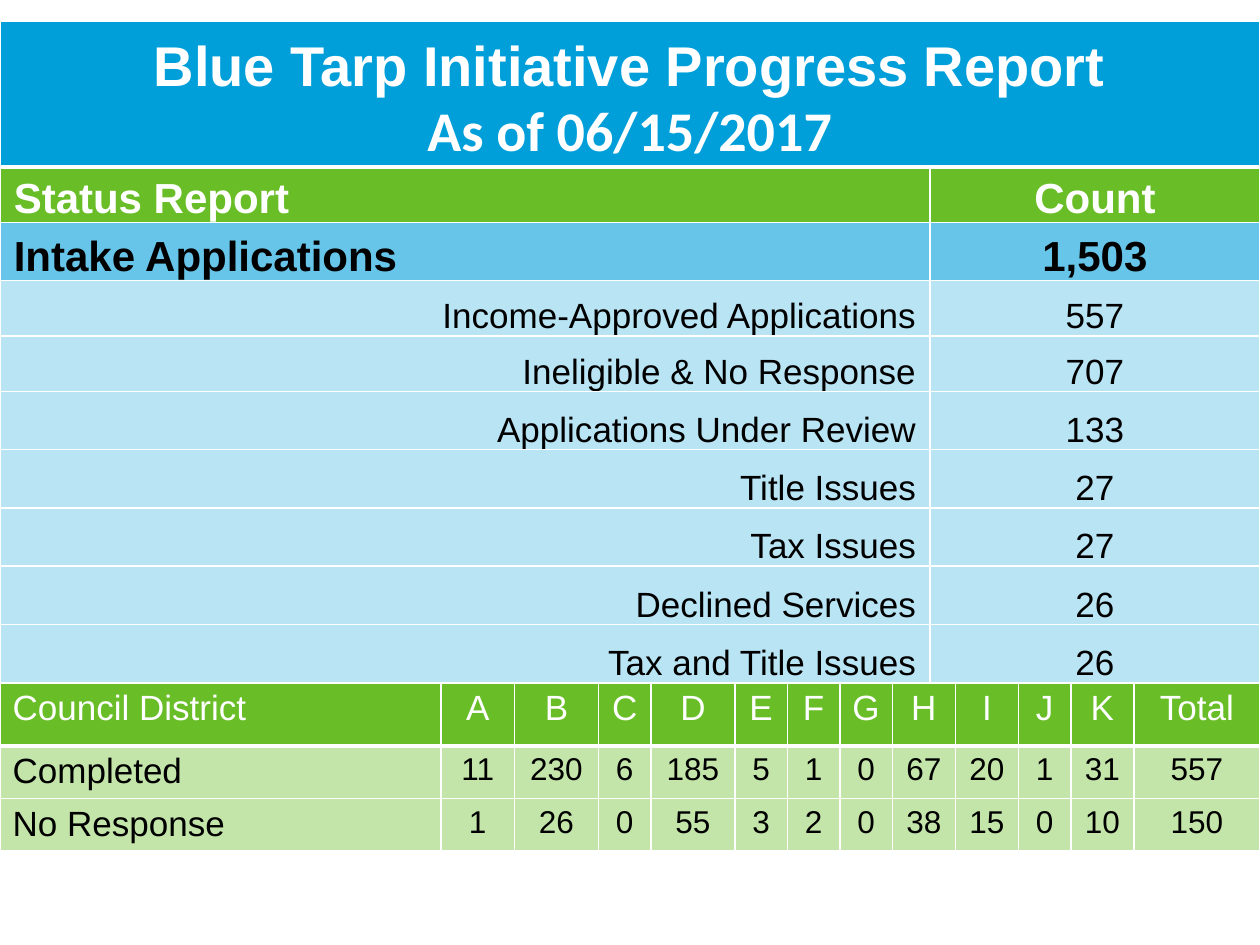
from lxml.etree import SubElement
from pptx import Presentation
from pptx.dml.color import RGBColor as RGB
from pptx.enum.text import MSO_ANCHOR as ANCHOR, PP_ALIGN as ALIGN
from pptx.oxml.ns import qn
from pptx.util import Pt

COLORS = {"blue": "009FDA", "green": "69BE28", "white": "FFFFFF", "black": "000000"}
TITLE = [("Blue Tarp Initiative Progress Report", "Arial"), ("As of 06/15/2017", "Calibri")]
STATUS = [
    ("Status Report", "Count"),
    ("Intake Applications", "1,503"),
    ("Income-Approved Applications", "557"),
    ("Ineligible & No Response", "707"),
    ("Applications Under Review", "133"),
    ("Title Issues", "27"),
    ("Tax Issues", "27"),
    ("Declined Services", "26"),
    ("Tax and Title Issues", "26"),
]
DISTRICTS = [
    ["Council District", *"ABCDEFGHIJK", "Total"],
    ["Completed", 11, 230, 6, 185, 5, 1, 0, 67, 20, 1, 31, 557],
    ["No Response", 1, 26, 0, 55, 3, 2, 0, 38, 15, 0, 10, 150],
]
STATUS_COLS = [531.4, 188.6]
STATUS_ROWS = [83.2, 31.7, 33.2, 31.7, 31.7] + [33.3] * 5
DISTRICT_COLS = [252, 42, 48, 30, 48, 30, 30, 30, 36, 36, 30, 36, 72]
DISTRICT_ROWS = [36, 30, 30]
STATUS_TOP = 12.2
SIDE_INSET = 7.9


def add_table(slide, top, cols, rows):
    frame = slide.shapes.add_table(len(rows), len(cols), Pt(0), Pt(top), Pt(sum(cols)), Pt(sum(rows)))
    table = frame.table
    table.horz_banding = False
    for col, width in zip(table.columns, cols):
        col.width = Pt(width)
    for row, height in zip(table.rows, rows):
        row.height = Pt(height)
    return table


def add_text(tf, text, size=20, font="Arial", color="black", bold=False, align=ALIGN.CENTER, first=True):
    p = tf.paragraphs[0] if first else tf.add_paragraph()
    p.alignment = align
    r = p.add_run()
    r.text = str(text)
    r.font.size = Pt(size)
    r.font.name = font
    r.font.bold = bold
    r.font.color.rgb = RGB.from_string(COLORS[color])


def fill_cell(cell, color, alpha=100):
    cell.fill.solid()
    cell.fill.fore_color.rgb = RGB.from_string(COLORS[color])
    if alpha < 100:
        clr = cell.fill._xPr.find(".//" + qn("a:srgbClr"))
        SubElement(clr, qn("a:alpha"), val=str(alpha * 1000))


def border_header(cell):
    tc_pr = cell._tc.get_or_add_tcPr()
    for side, width in (("L", 1), ("R", 1), ("T", 1), ("B", 3)):
        ln = SubElement(tc_pr, qn(f"a:ln{side}"), w=str(Pt(width)))
        SubElement(SubElement(ln, qn("a:solidFill")), qn("a:srgbClr"), val=COLORS["white"])


def seat_text(cell):
    cell.vertical_anchor = ANCHOR.BOTTOM
    cell.margin_left = cell.margin_right = Pt(SIDE_INSET)
    cell.margin_top = cell.margin_bottom = Pt(0)


def build_status(slide):
    table = add_table(slide, STATUS_TOP, STATUS_COLS, STATUS_ROWS)
    title = table.cell(0, 0)
    title.merge(table.cell(0, 1))
    for cell in table.rows[0].cells:
        border_header(cell)
    seat_text(title)
    fill_cell(title, "blue")
    for i, (line, font) in enumerate(TITLE):
        add_text(title.text_frame, line, size=32, font=font, color="white", bold=True, first=i == 0)

    looks = [
        (("green", 100), dict(size=24, color="white", bold=True), ALIGN.LEFT),
        (("blue", 60), dict(size=24, bold=True), ALIGN.LEFT),
        (("blue", 28), dict(size=20), ALIGN.RIGHT),
    ]
    for i, row in enumerate(STATUS):
        fill, style, label_align = looks[min(i, 2)]
        for j, text in enumerate(row):
            cell = table.cell(i + 1, j)
            seat_text(cell)
            fill_cell(cell, *fill)
            add_text(cell.text_frame, text, align=ALIGN.CENTER if j else label_align, **style)


def build_districts(slide):
    table = add_table(slide, STATUS_TOP + sum(STATUS_ROWS), DISTRICT_COLS, DISTRICT_ROWS)
    for i, row in enumerate(DISTRICTS):
        for j, text in enumerate(row):
            cell = table.cell(i, j)
            if i == 0:
                border_header(cell)
            fill_cell(cell, "green", 40 if i else 100)
            add_text(cell.text_frame, text, size=18 if i and j else 20,
                     color="black" if i else "white", align=ALIGN.CENTER if j else ALIGN.LEFT)


def main():
    prs = Presentation()
    prs.slide_width, prs.slide_height = Pt(720), Pt(540)
    s = prs.slides.add_slide(prs.slide_layouts[6])
    build_status(s)
    build_districts(s)
    prs.save("out.pptx")


if __name__ == "__main__":
    main()
